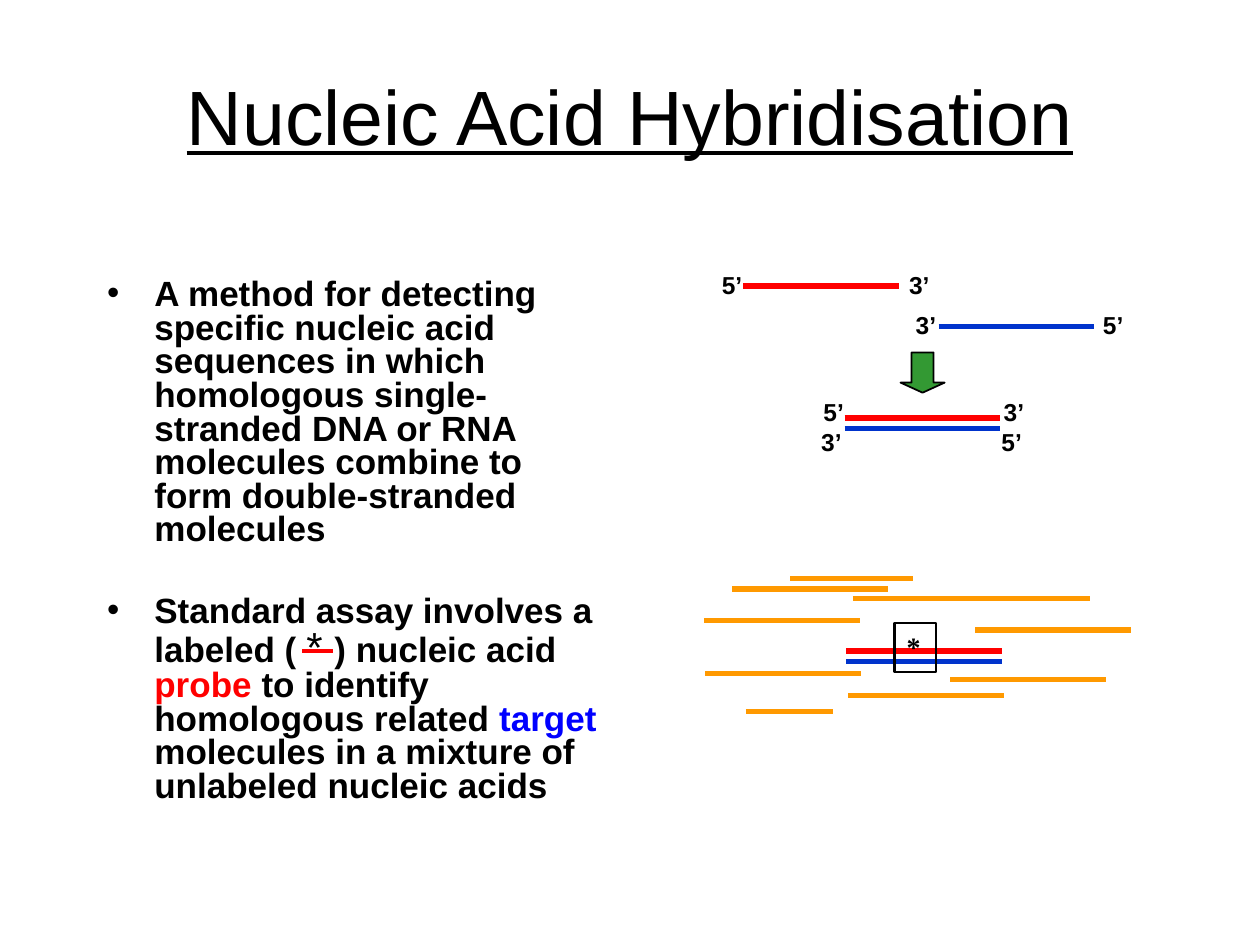
from dataclasses import dataclass

from lxml import etree
from pptx import Presentation
from pptx.dml.color import RGBColor
from pptx.enum.shapes import MSO_CONNECTOR, MSO_SHAPE
from pptx.enum.text import MSO_ANCHOR, MSO_AUTO_SIZE, PP_ALIGN
from pptx.oxml.ns import qn
from pptx.util import Pt

STRAIGHT = MSO_CONNECTOR.STRAIGHT
DOWN_ARROW, RECTANGLE = MSO_SHAPE.DOWN_ARROW, MSO_SHAPE.RECTANGLE
TOP, MIDDLE = MSO_ANCHOR.TOP, MSO_ANCHOR.MIDDLE
LEFT, CENTER = PP_ALIGN.LEFT, PP_ALIGN.CENTER
NO_AUTOFIT = MSO_AUTO_SIZE.NONE


@dataclass(frozen=True)
class Theme:
    font: str = "Arial"
    marker_font: str = "Times New Roman"
    text: RGBColor = RGBColor(0, 0, 0)
    probe: RGBColor = RGBColor(0xFF, 0, 0)
    target_text: RGBColor = RGBColor(0, 0, 0xFF)
    target: RGBColor = RGBColor(0, 0x33, 0xCC)
    unlabeled: RGBColor = RGBColor(0xFF, 0x99, 0)
    arrow: RGBColor = RGBColor(0x33, 0x99, 0x33)
    title_size: float = 44
    body_size: float = 20
    star_size: float = 24
    marker_size: float = 16
    label_size: float = 14
    strand_width: float = 3


THEME = Theme()
STRAND_LENGTH = 89


def place(shape, left, top, width, height):
    shape.left, shape.top = Pt(left), Pt(top)
    shape.width, shape.height = Pt(width), Pt(height)


def set_font(font, size, name=THEME.font, bold=True):
    font.name, font.size, font.bold = name, Pt(size), bold
    font.color.rgb = THEME.text


def add_strand(slide, left, top, color, length=STRAND_LENGTH, width=THEME.strand_width):
    strand = slide.shapes.add_connector(
        STRAIGHT, Pt(left), Pt(top), Pt(left + length), Pt(top))
    strand.line.color.rgb = color
    strand.line.width = Pt(width)
    etree.SubElement(strand._element.spPr, qn("a:effectLst"))


def add_end_labels(slide, left, top, start, end, tab):
    """Label both ends of a strand, the second one at a tab stop."""
    label = slide.shapes.add_textbox(Pt(left), Pt(top), Pt(133), Pt(24))
    label.text_frame.word_wrap = False
    paragraph = label.text_frame.paragraphs[0]
    paragraph.text = f"{start}\t{end}"
    set_font(paragraph.font, THEME.label_size)
    properties = paragraph._p.get_or_add_pPr()
    tab_list = etree.Element(qn("a:tabLst"))
    etree.SubElement(tab_list, qn("a:tab"), pos=str(Pt(tab)), algn="l")
    properties.insert(0, tab_list)


def add_title(slide, box):
    title = slide.shapes.title
    place(title, *box)
    title.text_frame.vertical_anchor = MIDDLE
    title.text_frame.auto_size = NO_AUTOFIT
    paragraph = title.text_frame.paragraphs[0]
    paragraph.text = "Nucleic Acid Hybridisation"
    paragraph.alignment = CENTER
    set_font(paragraph.font, THEME.title_size, bold=False)
    paragraph.font.underline = True


def add_bullet(paragraph, space_before):
    paragraph.line_spacing = 0.8
    paragraph.space_before = Pt(space_before)
    set_font(paragraph.font, THEME.body_size)
    properties = paragraph._p.get_or_add_pPr()
    properties.set("marL", str(Pt(27)))
    properties.set("indent", str(-Pt(27)))


def add_body(slide, box):
    body = slide.placeholders[1]
    place(body, *box)
    frame = body.text_frame
    frame.auto_size = NO_AUTOFIT
    method = frame.paragraphs[0]
    method.text = (
        "A method for detecting specific nucleic acid sequences in which "
        "homologous single-stranded DNA or RNA molecules combine to form "
        "double-stranded molecules")
    add_bullet(method, 0)

    assay = frame.add_paragraph()
    add_bullet(assay, 27.5)
    pieces = [
        ("Standard assay involves a labeled ( ", None),
        ("* ", None),
        (") nucleic acid ", None),
        ("probe ", THEME.probe),
        ("to identify homologous related ", None),
        ("target ", THEME.target_text),
        ("molecules in a mixture of unlabeled nucleic acids", None),
    ]
    for text, color in pieces:
        run = assay.add_run()
        run.text = text
        if color is not None:
            run.font.color.rgb = color
    star = assay.runs[1]
    star.font.size, star.font.bold = Pt(THEME.star_size), False

    left, top, _, _ = box
    add_strand(slide, left + 118.8, top + 216, THEME.probe, length=17.3, width=2.25)


def add_hybridisation(slide, box):
    """Two single strands above the arrow, their duplex below it."""
    left, top, _, _ = box
    strands = [
        (22.8, 13.4, THEME.probe),
        (134.4, 36.5, THEME.target),
        (80.6, 88.8, THEME.probe),
        (80.6, 94.8, THEME.target),
    ]
    for x, y, color in strands:
        add_strand(slide, left + x, top + y, color)

    arrow = slide.shapes.add_shape(
        DOWN_ARROW, Pt(left + 112.6), Pt(top + 51.4), Pt(25.2), Pt(23))
    arrow.adjustments[0], arrow.adjustments[1] = 0.5, 0.25
    arrow.shadow.inherit = False
    arrow.fill.solid()
    arrow.fill.fore_color.rgb = THEME.arrow
    arrow.line.color.rgb = THEME.text
    arrow.line.width = Pt(1)

    labels = [
        (3.4, 0.8, "5’", "3’", 107),
        (114.2, 23.8, "3’", "5’", 107),
        (61.5, 73.2, "5’", "3’", 103),
        (60.2, 90.5, "3’", "5’", 103),
    ]
    for x, y, start, end, tab in labels:
        add_end_labels(slide, left + x, top + y, start, end, tab)


def add_assay(slide, box):
    """A labeled duplex among unlabeled strands."""
    left, top, _, _ = box
    add_strand(slide, left + 81.5, top + 42, THEME.probe)
    add_strand(slide, left + 81.5, top + 48, THEME.target)
    unlabeled = [
        (85.4, 12, 135.4), (155.3, 30, STRAND_LENGTH), (49.6, 0.4, 70),
        (16.5, 6.6, STRAND_LENGTH), (0.5, 24.4, STRAND_LENGTH),
        (1, 54.7, STRAND_LENGTH), (24.2, 76.6, 50),
        (82.6, 67.4, STRAND_LENGTH), (140.9, 58.3, STRAND_LENGTH),
    ]
    for x, y, length in unlabeled:
        add_strand(slide, left + x, top + y, THEME.unlabeled, length)

    marker = slide.shapes.add_shape(
        RECTANGLE, Pt(left + 109), Pt(top + 26), Pt(23.8), Pt(28))
    marker.shadow.inherit = False
    marker.fill.background()
    marker.line.color.rgb = THEME.text
    marker.line.width = Pt(1.5)
    marker.text_frame.word_wrap = False
    marker.text_frame.vertical_anchor = TOP
    paragraph = marker.text_frame.paragraphs[0]
    paragraph.text = "*"
    paragraph.alignment = LEFT
    set_font(paragraph.font, THEME.marker_size, THEME.marker_font)


def main():
    presentation = Presentation()
    presentation.slide_width, presentation.slide_height = Pt(720), Pt(540)
    slide = presentation.slides.add_slide(presentation.slide_layouts[1])
    add_title(slide, (54, 20.4, 612, 90))
    add_body(slide, (54, 156.2, 300, 324))
    add_hybridisation(slide, (402, 150, 248, 115))
    add_assay(slide, (402, 330, 245, 77))
    presentation.save("out.pptx")


if __name__ == "__main__":
    main()
